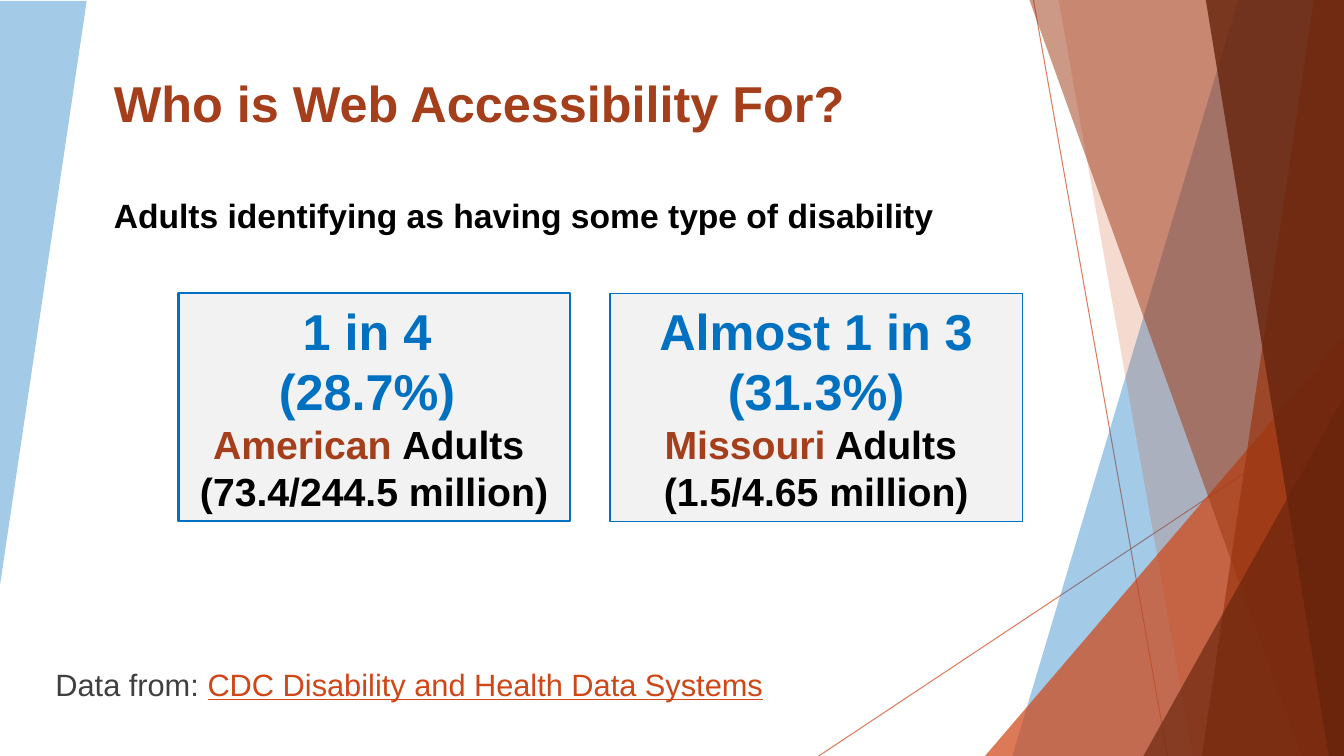
"""Build the slide on who web accessibility is for."""
import dataclasses

import lxml.etree
import pptx
import pptx.dml.color
import pptx.enum.shapes
import pptx.enum.text
import pptx.oxml.ns
import pptx.util

Inches = pptx.util.Inches
Shape = pptx.enum.shapes.MSO_SHAPE
Align = pptx.enum.text.PP_ALIGN
Anchor = pptx.enum.text.MSO_ANCHOR
qn = pptx.oxml.ns.qn


@dataclasses.dataclass(frozen=True)
class Theme:
    font: str = "Arial"
    blue: str = "0070C0"
    sky: str = "A3CBE8"
    orange: str = "CF4717"
    rust: str = "A43E1B"
    brick: str = "9B3511"
    brown: str = "67240C"
    pale: str = "F2F2F2"
    black: str = "000000"
    gray: str = "404040"
    large: int = 36
    mid: int = 28
    small: int = 24
    note: int = 22


class Deck:
    def __init__(self, theme):
        self.theme = theme
        self.show = pptx.Presentation()
        self.show.slide_width = Inches(13.33)
        self.show.slide_height = Inches(7.5)
        self.slide = self.show.slides.add_slide(self.show.slide_layouts[1])

    def tint(self, color, name):
        color.rgb = pptx.dml.color.RGBColor.from_string(name)

    def fade(self, part, alpha):
        for node in part.iter(qn("a:srgbClr")):
            lxml.etree.SubElement(node, qn("a:alpha")).set("val", str(alpha * 1000))

    def paint(self, shape, color, alpha=100):
        shape.shadow.inherit = False
        shape.fill.solid()
        self.tint(shape.fill.fore_color, color)
        shape.line.fill.background()
        if alpha < 100:
            self.fade(shape._element.spPr, alpha)

    def line(self, start, end):
        kind = pptx.enum.shapes.MSO_CONNECTOR.STRAIGHT
        link = self.slide.shapes.add_connector(kind, *map(Inches, start + end))
        link.line.width = pptx.util.Pt(0.75)
        self.tint(link.line.color, self.theme.orange)
        self.fade(link._element.spPr, 70)
        lxml.etree.SubElement(link._element.spPr, qn("a:effectLst"))

    def band(self, top, right, foot, base, color, alpha):
        spots = [(top, 0), (right, 0), (right, base), (foot, base)]
        spots = [(Inches(x), Inches(y)) for x, y in spots]
        form = self.slide.shapes.build_freeform(*spots[0], scale=1)
        form.add_line_segments(spots[1:], close=True)
        self.paint(form.convert_to_shape(), color, alpha)

    def wedge(self, place, color, alpha=100, turn=0):
        shape = self.slide.shapes.add_shape(Shape.ISOSCELES_TRIANGLE, *map(Inches, place))
        shape.adjustments[0] = 1
        shape.rotation = turn
        self.paint(shape, color, alpha)

    def fill_text(self, shape, runs, align=Align.LEFT, anchor=Anchor.TOP, indent=0):
        frame = shape.text_frame
        form = {"word_wrap": True, "auto_size": pptx.enum.text.MSO_AUTO_SIZE.NONE,
                "vertical_anchor": anchor}
        for key, value in form.items():
            setattr(frame, key, value)
        para = frame.paragraphs[0]
        props = para._p.get_or_add_pPr()
        props.set("marL", str(Inches(indent)))
        props.set("indent", "0")
        lxml.etree.SubElement(props, qn("a:buNone"))
        for key, value in {"alignment": align, "space_before": 0}.items():
            setattr(para, key, value)
        for text, size, color, style in runs:
            for count, piece in enumerate(text.split("\n")):
                if count:
                    para.add_line_break()
                if piece:
                    run = para.add_run()
                    run.text = piece
                    look = {"name": self.theme.font, "size": pptx.util.Pt(size)} | style
                    for key, value in look.items():
                        setattr(run.font, key, value)
                    self.tint(run.font.color, color)

    def holder(self, index, place, runs, indent=0):
        shape = self.slide.placeholders[index]
        for key, value in zip(("left", "top", "width", "height"), place):
            setattr(shape, key, Inches(value))
        self.fill_text(shape, runs, indent=indent)

    def label(self, place, runs):
        self.fill_text(self.slide.shapes.add_textbox(*map(Inches, place)), runs)

    def card(self, left, width, weight, runs):
        place = (left, 2.91, width, 2.26)
        shape = self.slide.shapes.add_shape(Shape.RECTANGLE, *map(Inches, place))
        self.paint(shape, self.theme.pale)
        self.tint(shape.line.color, self.theme.blue)
        shape.line.width = pptx.util.Pt(weight)
        self.fill_text(shape, runs, Align.CENTER, Anchor.MIDDLE)


def main():
    theme = Theme()
    deck = Deck(theme)
    bold = {"bold": True}
    edge, base = 13.33, 7.5

    deck.line((10.25, 0), (11.58, base))
    deck.line((edge, 4.04), (8.12, base))
    deck.band(12.28, edge, 10.04, base, theme.blue, 36)
    deck.band(10.5, edge, 11.83, base, theme.orange, 20)
    deck.wedge((9.77, 3.34, 3.56, 4.16), theme.orange, 72)
    deck.band(10.21, edge, 12.91, base, theme.brick, 50)
    deck.band(13.03, edge, 11.92, base, theme.brick, 70)
    deck.band(11.96, edge, 13.18, base, theme.brown, 80)
    deck.wedge((11.34, 3.94, 1.99, 3.56), theme.brown, 66)
    deck.wedge((-0.06, 0.01, 0.92, 6.2), theme.sky, turn=180)

    deck.holder(0, (1.03, 0.67, 8.88, 0.99),
                [("Who is Web Accessibility For?", theme.large, theme.rust, bold)])
    deck.holder(1, (0.41, 6.55, 11.92, 0.9), [
        ("Data from: ", theme.note, theme.gray, {}),
        ("CDC Disability and Health Data Systems", theme.note, theme.orange,
         {"underline": True}),
    ], indent=0.04)
    deck.label((1.03, 1.88, 8.88, 0.5),
               [("Adults identifying as having some type of disability",
                 theme.small, theme.black, bold)])

    cards = [
        (1.77, 3.88, 1.5, "1 in 4 \n(28.7%) \n", "American ",
         "Adults \n(73.4/244.5 million)"),
        (6.05, 4.09, 0.75, "Almost 1 in 3 (31.3%)\n", "Missouri",
         " Adults \n(1.5/4.65 million)"),
    ]
    for left, width, weight, share, place, count in cards:
        deck.card(left, width, weight, [
            (share, theme.large, theme.blue, bold),
            (place, theme.mid, theme.rust, bold),
            (count, theme.mid, theme.black, bold),
        ])
    deck.show.save("out.pptx")


if __name__ == "__main__":
    main()
